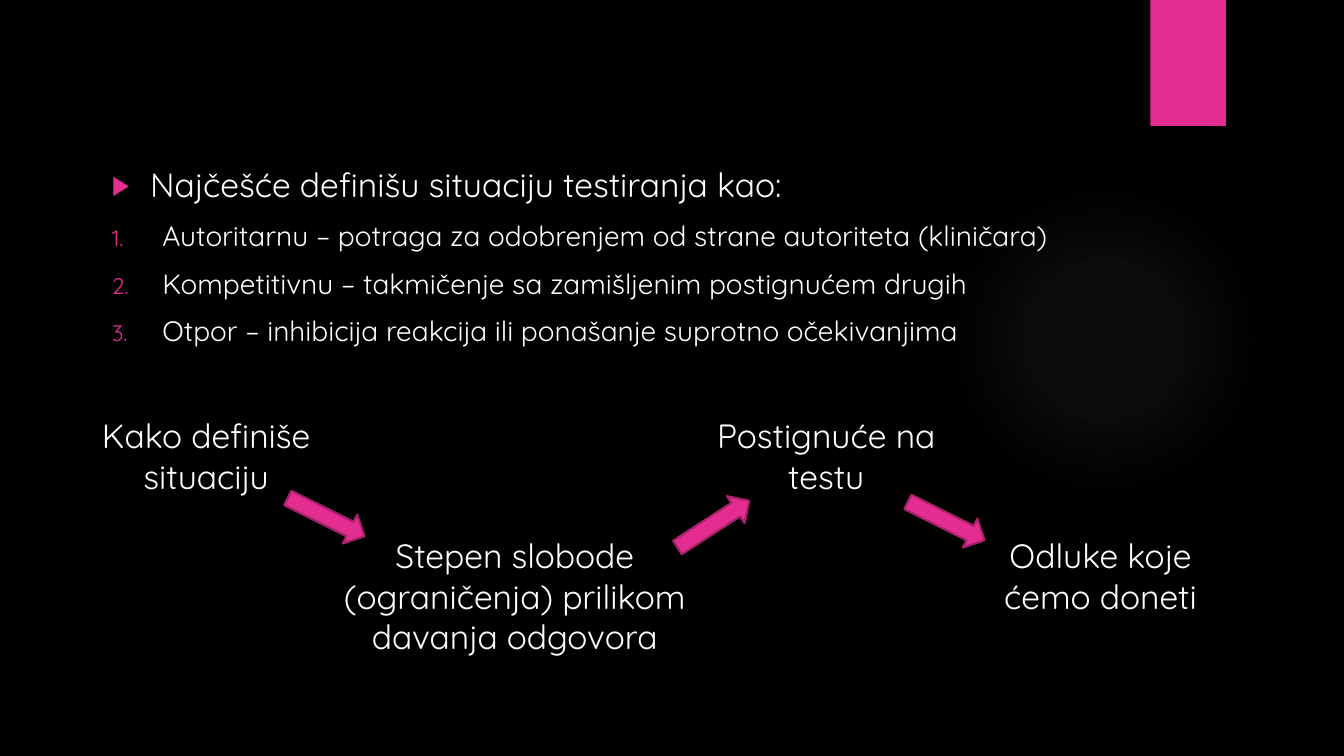
"""Build the slide on how a test taker defines the testing situation."""
from lxml import etree
from pptx import Presentation
from pptx import util as u
from pptx.dml.color import RGBColor
from pptx.enum import shapes, text
from pptx.oxml import parse_xml
from pptx.oxml.ns import nsdecls, qn

COLORS = {"background": "000000", "text": "FFFFFF", "accent": "E32D91",
          "outline": "A8216B", "glow": "B1B1BD"}
FONT = "Quicksand"


def add_filled(slide, preset, box, color):
    shape = slide.shapes.add_shape(preset, *[u.Inches(length) for length in box])
    shape.shadow.inherit = False
    shape.fill.solid()
    shape.fill.fore_color.rgb = RGBColor.from_string(COLORS[color])
    shape.line.fill.background()
    return shape


def style_font(paragraph, size):
    paragraph.font.name = FONT
    paragraph.font.size = u.Pt(size)
    paragraph.font.color.rgb = RGBColor.from_string(COLORS["text"])


presentation = Presentation()
presentation.slide_width = u.Inches(13.33)
presentation.slide_height = u.Inches(7.5)
slide = presentation.slides.add_slide(presentation.slide_layouts[1])
slide.background.fill.solid()
slide.background.fill.fore_color.rgb = RGBColor.from_string(COLORS["background"])
title = slide.shapes.title
title.element.getparent().remove(title.element)
body = slide.placeholders[1]

glow = add_filled(slide, shapes.MSO_SHAPE.OVAL, (9.41, 1.83, 3.08, 3.08), "glow")
stops = "".join(
    f'<a:gs pos="{position * 1000}"><a:srgbClr val="{COLORS["glow"]}">'
    f'<a:alpha val="{alpha * 1000}"/></a:srgbClr></a:gs>'
    for position, alpha in ((0, 7), (36, 6), (69, 0), (100, 0)))
gradient = parse_xml(
    f'<a:gradFill {nsdecls("a")} rotWithShape="1"><a:gsLst>{stops}</a:gsLst>'
    '<a:path path="circle"><a:fillToRect l="50000" t="50000" r="50000" b="50000"/>'
    '</a:path></a:gradFill>')
solid = glow.element.spPr.find(qn("a:solidFill"))
solid.getparent().replace(solid, gradient)

add_filled(slide, shapes.MSO_SHAPE.RECTANGLE, (11.41, 0, 0.75, 1.25), "accent")

body.left, body.top = u.Inches(1.01), u.Inches(1.58)
body.width, body.height = u.Inches(11.02), u.Inches(4.59)
body.text_frame.auto_size = text.MSO_AUTO_SIZE.NONE
body.text_frame.vertical_anchor = text.MSO_ANCHOR.TOP
statements = [
    "Najčešće definišu situaciju testiranja kao:",
    "Autoritarnu – potraga za odobrenjem od strane autoriteta (kliničara)",
    "Kompetitivnu – takmičenje sa zamišljenim postignućem drugih",
    "Otpor – inhibicija reakcija ili ponašanje suprotno očekivanjima",
]
body.text_frame.text = "\n".join(statements)
for index, paragraph in enumerate(body.text_frame.paragraphs):
    numbered = index > 0
    indent = u.Inches(0.5 if numbered else 0.38)
    properties = paragraph._p.get_or_add_pPr()
    properties.set("marL", str(indent))
    properties.set("indent", str(-indent))
    bullet_color = etree.SubElement(properties, qn("a:buClr"))
    etree.SubElement(bullet_color, qn("a:srgbClr"), val=COLORS["accent"])
    etree.SubElement(properties, qn("a:buSzPct"), val="80000")
    etree.SubElement(properties, qn("a:buFont"), typeface=FONT)
    if numbered:
        etree.SubElement(properties, qn("a:buAutoNum"), type="arabicPeriod")
    else:
        etree.SubElement(properties, qn("a:buChar"), char="▶")
    paragraph.space_before = u.Pt(10 if numbered else 0)
    style_font(paragraph, 20 if numbered else 24)

UPPER, LOWER = 4.07, 5.26
steps = [
    ("Kako definiše situaciju", 0.46, UPPER, 3.17, 0.91),
    ("Stepen slobode (ograničenja) prilikom davanja odgovora", 3.23, LOWER, 3.75, 1.31),
    ("Postignuće na testu", 6.79, UPPER, 2.81, 0.91),
    ("Odluke koje ćemo doneti", 9.51, LOWER, 2.81, 0.91),
]
for wording, *box in steps:
    step = slide.shapes.add_textbox(*[u.Inches(length) for length in box])
    step.text_frame.word_wrap = True
    step.text_frame.auto_size = text.MSO_AUTO_SIZE.SHAPE_TO_FIT_TEXT
    step.text_frame.text = wording
    paragraph = step.text_frame.paragraphs[0]
    paragraph.alignment = text.PP_ALIGN.CENTER
    style_font(paragraph, 24)

for left, top, rotation in ((2.81, 4.97, 26.5), (6.65, 5.04, 327), (8.96, 5.01, 26.5)):
    arrow = add_filled(slide, shapes.MSO_SHAPE.RIGHT_ARROW, (left, top, 0.85, 0.32), "accent")
    arrow.rotation = rotation
    arrow.line.color.rgb = RGBColor.from_string(COLORS["outline"])
    arrow.line.width = u.Pt(1.5)

presentation.save("out.pptx")
